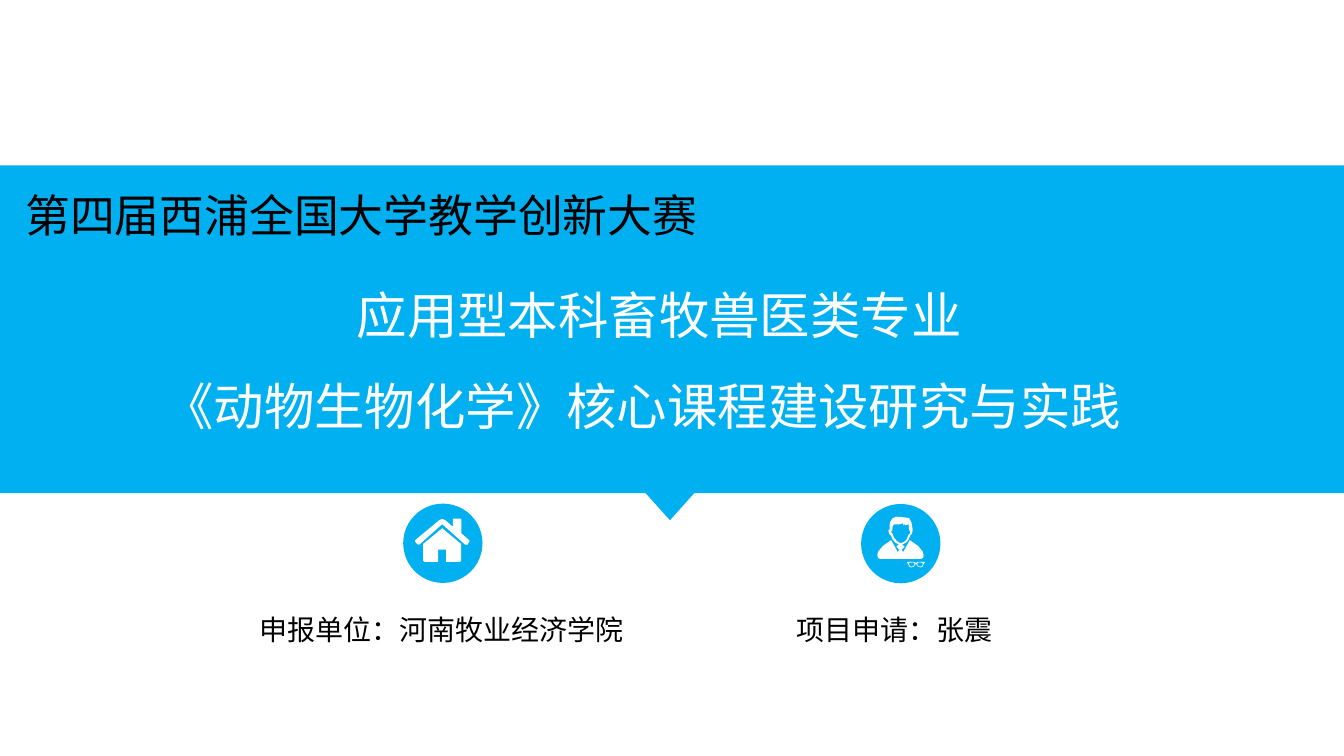
from lxml.etree import SubElement
from pptx import Presentation
from pptx.dml.color import RGBColor
from pptx.enum.shapes import MSO_SHAPE
from pptx.enum.text import MSO_AUTO_SIZE, PP_ALIGN
from pptx.oxml.ns import qn
from pptx.util import Pt

FONT = "Noto Sans CJK SC"
BLUE, WHITE, BLACK = "00B0F0", "FFFFFF", "000000"
DISC_SIZE = 42.5
PERSON_AXIS, GLASSES_AXIS = 482.4, 490.7

ROOF = [(250.6, 291.8), (249.2, 291.8), (236.9, 280.8), (224.6, 291.8), (223.6, 291.6),
        (222.4, 290.2), (222.4, 289.4), (235.4, 278.6), (236.9, 278), (238.4, 278.6),
        (242.6, 282.2), (242.6, 278.2), (243, 277.9), (246.9, 277.9), (247.2, 278.3),
        (247.2, 285.8), (251.4, 289.4), (251.4, 290.2)]
WALLS = [(247, 300.4), (246.4, 301), (239, 301), (239, 294.5), (234.7, 294.5),
         (234.7, 301), (227.3, 301), (226.7, 300.4), (226.7, 291.4), (236.9, 283),
         (247, 291.4)]
HALF_SUIT = [(482.4, 290.9), (484.6, 293), (483.1, 294.5), (483.8, 295.9), (487.4, 289.4),
             (491.8, 292.5), (494.3, 295.5), (494.8, 297.4), (494.5, 299), (493.2, 299.5)]
HAIR = [(488.9, 283.7), (488.3, 280), (487, 277.5), (483.1, 277), (480, 276.8),
        (478, 277.8), (476.7, 280), (476.5, 283.7), (475.9, 284.2), (476.3, 286),
        (477.4, 287), (478.2, 289), (479.8, 290.8), (482.4, 292.3), (485.5, 290.6),
        (486.8, 289), (487.6, 286.8), (488.6, 285.9)]
FACE = [(487.5, 285.1), (487.4, 285.8), (486.7, 286.5), (485.8, 288.7), (484.6, 290.2),
        (482.6, 291), (480.6, 290), (478.9, 288), (478.2, 286), (477.5, 285.3),
        (477.5, 284.5), (478, 284.3), (478.2, 282), (478.8, 281), (482, 280.9),
        (483.8, 280.3), (484, 281.4), (484.8, 280.8), (485, 281.4), (486.8, 280.9),
        (487, 284), (487.5, 284.4)]
RIM = [(490.7, 301.6), (489.6, 301), (486, 301), (486, 301.6), (486.6, 302.2),
       (487, 303.4), (488.2, 304), (489.5, 303.6), (490.4, 302.4)]
LENS = [(490, 301.8), (489.2, 301.3), (487.2, 301.5), (487, 302.2), (487.4, 303.2),
        (488.3, 303.7), (489.3, 303.3), (489.8, 302.6)]


def color(value):
    """Turn a hex string into a colour."""
    return RGBColor.from_string(value)


def paint(shape, fill):
    """Give a shape a plain fill without line or shadow."""
    shape.shadow.inherit = False
    shape.fill.solid()
    shape.fill.fore_color.rgb = color(fill)
    shape.line.fill.background()
    return shape


def add_block(shapes, kind, left, top, width, height, fill=BLUE):
    """Add a filled preset shape."""
    return paint(shapes.add_shape(kind, Pt(left), Pt(top), Pt(width), Pt(height)), fill)


def add_outline(shapes, *contours, fill=WHITE):
    """Add one freeform made of closed contours."""
    points = [[(Pt(x), Pt(y)) for x, y in contour] for contour in contours]
    builder = shapes.build_freeform(*points[0][0])
    builder.add_line_segments(points[0][1:], close=True)
    for contour in points[1:]:
        builder.move_to(*contour[0])
        builder.add_line_segments(contour[1:], close=True)
    return paint(builder.convert_to_shape(), fill)


def mirror(points, axis):
    """Reflect points across a vertical axis, in reverse order."""
    return [(2 * axis - x, y) for x, y in reversed(points)]


def add_text(shapes, text, left, top, width, height, size=15, fill=BLACK,
             align=PP_ALIGN.LEFT, spacing=None, wrap=False, margins=(7.2, 3.6, 7.2, 3.6),
             indents=()):
    """Add a text box with one paragraph per line of text."""
    box = shapes.add_textbox(Pt(left), Pt(top), Pt(width), Pt(height))
    frame = box.text_frame
    frame.word_wrap = wrap
    frame.auto_size = MSO_AUTO_SIZE.SHAPE_TO_FIT_TEXT
    (frame.margin_left, frame.margin_top,
     frame.margin_right, frame.margin_bottom) = map(Pt, margins)
    for index, line in enumerate(text.split("\n")):
        para = frame.add_paragraph() if index else frame.paragraphs[0]
        para.alignment = align
        para.line_spacing = spacing
        if index < len(indents):
            properties = para._p.get_or_add_pPr()
            properties.set("marL", str(Pt(indents[index])))
            properties.set("indent", "0")
        span = para.add_run()
        span.text = line
        span.font.size = Pt(size)
        span.font.color.rgb = color(fill)
        span.font.name = FONT
        SubElement(span._r.get_or_add_rPr(), qn("a:ea")).set("typeface", FONT)
    return box


def add_person(shapes):
    """Add the grouped disc with the person icon."""
    group = shapes.add_group_shape().shapes
    add_block(group, MSO_SHAPE.OVAL, 461.3, 270, DISC_SIZE, DISC_SIZE)
    add_outline(group, RIM, LENS, mirror(RIM, GLASSES_AXIS), mirror(LENS, GLASSES_AXIS))
    add_outline(group, HALF_SUIT + mirror(HALF_SUIT[1:], PERSON_AXIS))
    add_outline(group, HAIR, FACE)


def add_house(shapes):
    """Add the disc with the house icon."""
    add_block(shapes, MSO_SHAPE.OVAL, 216, 269.8, DISC_SIZE, DISC_SIZE)
    add_outline(shapes, ROOF, WALLS)


def main():
    """Build the title slide."""
    deck = Presentation()
    deck.slide_width, deck.slide_height = Pt(720), Pt(405)
    page = deck.slides.add_slide(deck.slide_layouts[6])
    shapes = page.shapes
    add_block(shapes, MSO_SHAPE.RECTANGLE, 0, 88.6, 720, 175.7)
    pointer = add_block(shapes, MSO_SHAPE.ISOSCELES_TRIANGLE, 343.4, 261.4, 31, 17.3)
    pointer.rotation = 180
    add_text(shapes, "申报单位：河南牧业经济学院", 131.8, 324.7, 211.7, 25.2)
    add_text(shapes, "项目申请：张震", 419, 324.7, 120.2, 25.2, align=PP_ALIGN.CENTER)
    add_person(shapes)
    add_text(shapes, "应用型本科畜牧兽医类专业\n《动物生物化学》核心课程建设研究与实践",
             10.1, 132.5, 686.2, 105.1, size=27, fill=WHITE, align=PP_ALIGN.CENTER,
             spacing=1.5, wrap=True, margins=(7.2, 3.6, 25.4, 3.6), indents=(18.2,))
    add_house(shapes)
    add_text(shapes, "第四届西浦全国大学教学创新大赛", 8.6, 97.9, 374.4, 34.6, size=24,
             margins=(5, 2.9, 5, 2.9))
    deck.save("out.pptx")


if __name__ == "__main__":
    main()
